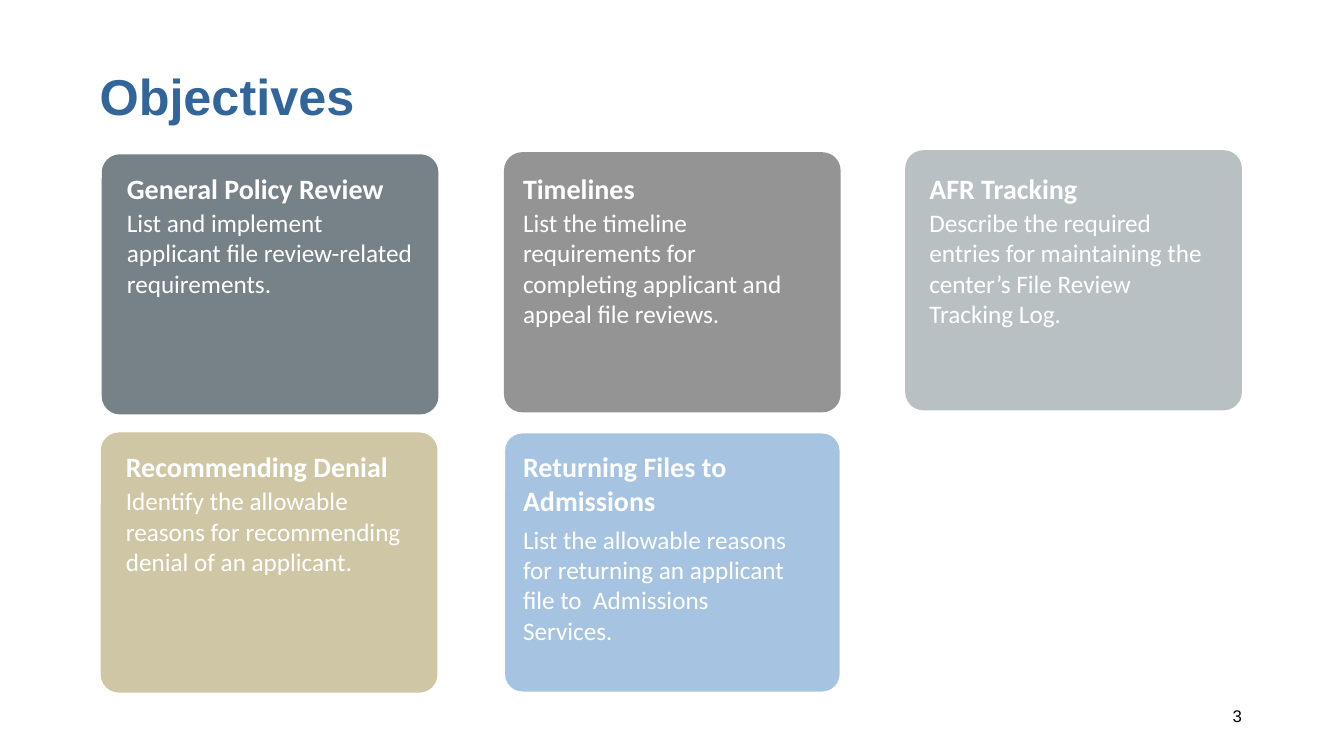
from pptx import Presentation
from pptx.dml.color import RGBColor
from pptx.enum.shapes import MSO_SHAPE
from pptx.enum.text import PP_ALIGN
from pptx.util import Pt

COLORS = {
    "title": "32669A", "text": "FFFFFF", "number": "000000",
    "slate": "768288", "gray": "949494", "silver": "B9C0C3",
    "sand": "CFC6A5", "sky": "A6C4E2",
}
CARD_WIDTH, CARD_HEIGHT = 240.5, 185.8
HEADING_TOPS = (118.8, 317.5)
HEADING_LINE = 25.9

CARDS = [
    dict(left=72.7, top=110.2, row=0, color="slate", indent=10.8,
         heading="General Policy Review",
         body="List and implement applicant file review-related requirements."),
    dict(left=360, top=108.7, row=0, color="gray", indent=6.5,
         heading="Timelines",
         body="List the timeline requirements for completing applicant and appeal file reviews."),
    dict(left=646.6, top=107.3, row=0, color="silver", indent=10.1,
         heading="AFR Tracking",
         body="Describe the required entries for maintaining the center’s File Review Tracking Log."),
    dict(left=72, top=308.9, row=1, color="sand", indent=10.8,
         heading="Recommending Denial",
         body="Identify the allowable reasons for recommending denial of an applicant."),
    dict(left=360, top=308.9, row=1, color="sky", indent=6.5,
         heading="Returning Files to Admissions",
         body="List the allowable reasons for returning an applicant file to  Admissions Services.",
         body_offset=53.3, body_width=214.5, outlined=True),
]


def rgb(name):
    """Return the named colour."""
    return RGBColor.from_string(COLORS[name])


def add_text(slide, text, left, top, width, height, *, size, font="Calibri",
             color="text", bold=False, align=PP_ALIGN.LEFT):
    """Add a wrapped text box with one formatted paragraph."""
    shape = slide.shapes.add_textbox(Pt(left), Pt(top), Pt(width), Pt(height))
    shape.text_frame.word_wrap = True
    paragraph = shape.text_frame.paragraphs[0]
    paragraph.alignment = align
    run = paragraph.add_run()
    run.text = text
    run.font.size = Pt(size)
    run.font.name = font
    run.font.bold = bold
    run.font.color.rgb = rgb(color)


def add_card(slide, left, top, row, color, indent, heading, body,
             body_offset=HEADING_LINE, body_width=219.6, outlined=False):
    """Add a rounded card with its heading and body text."""
    shape = slide.shapes.add_shape(MSO_SHAPE.ROUNDED_RECTANGLE, Pt(left), Pt(top),
                                   Pt(CARD_WIDTH), Pt(CARD_HEIGHT))
    shape.adjustments[0] = 0.07
    shape.shadow.inherit = False
    shape.fill.solid()
    shape.fill.fore_color.rgb = rgb(color)
    if outlined:
        shape.line.color.rgb = rgb("text")
        shape.line.width = Pt(1.5)
    else:
        shape.line.fill.background()
    text_left = left + indent
    heading_top = HEADING_TOPS[row]
    add_text(slide, body, text_left, heading_top + body_offset, body_width, 94.3, size=18)
    add_text(slide, heading, text_left, heading_top, 219.6, 31.7, size=20, bold=True)


def build_objectives(presentation):
    """Add the objectives slide with its title, cards and page number."""
    slide = presentation.slides.add_slide(presentation.slide_layouts[6])
    add_text(slide, "Objectives", 64.1, 43.2, 712.8, 51.1,
             size=36, font="Arial", color="title", bold=True)
    for card in CARDS:
        add_card(slide, **card)
    add_text(slide, "3", 678.2, 500.4, 216, 28.8,
             size=12, font="Arial", color="number", align=PP_ALIGN.RIGHT)


def main():
    """Build and save the presentation."""
    presentation = Presentation()
    presentation.slide_width, presentation.slide_height = Pt(960), Pt(540)
    build_objectives(presentation)
    presentation.save("out.pptx")


if __name__ == "__main__":
    main()
